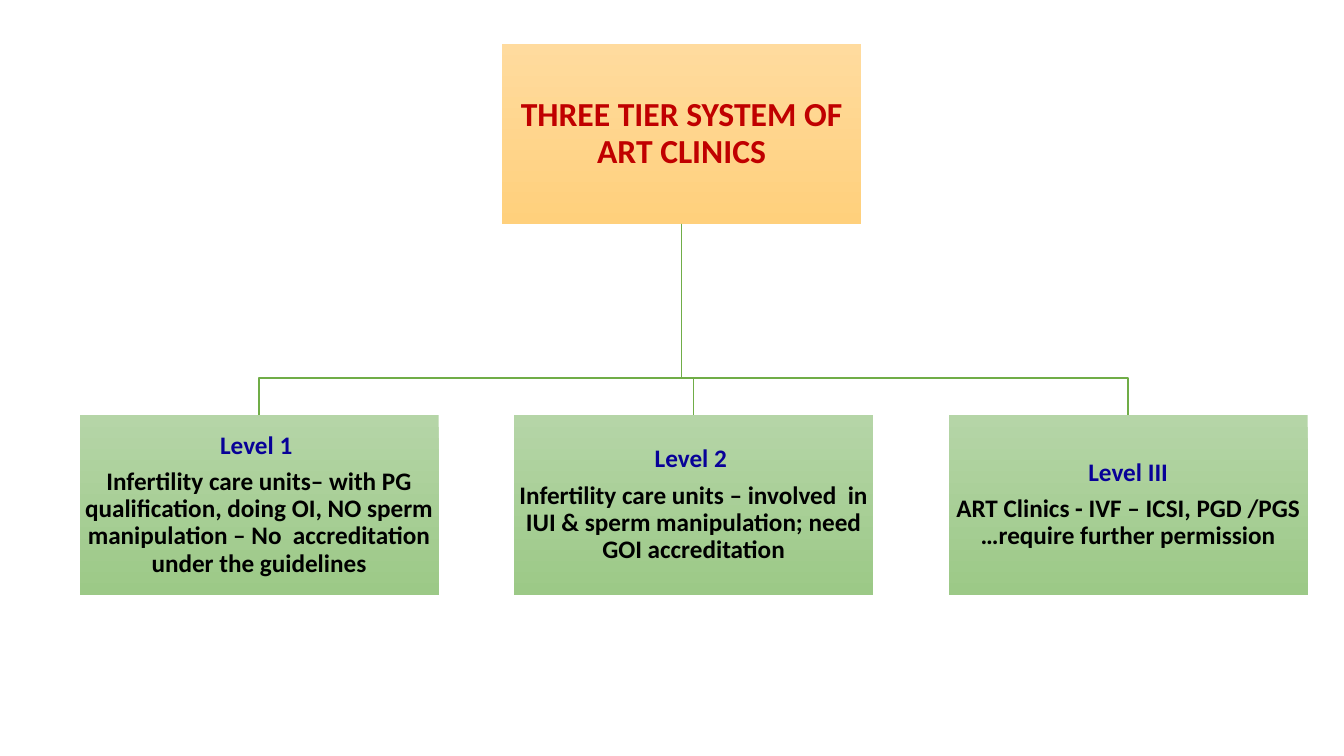
"""Builds an organisation chart of the three tiers of ART clinics."""
from dataclasses import dataclass

from pptx import Presentation
from pptx.dml.color import RGBColor
from pptx.enum.shapes import MSO_SHAPE
from pptx.enum.text import MSO_ANCHOR, MSO_AUTO_SIZE, PP_ALIGN
from pptx.util import Inches, Pt


@dataclass(frozen=True)
class Theme:
    """Colours, font and type sizes of the chart."""
    font: str = "Calibri"
    heading_size: int = 24
    level_size: int = 18
    heading: str = "C00000"
    level: str = "080198"
    detail: str = "000000"
    line: str = "70AD47"
    root_fill: tuple = ("FFDB9E", "FFD07C")
    level_fill: tuple = ("B5D5A7", "9CC987")


class TierChart:
    """Draws boxes and elbow lines on one page in one theme."""

    def __init__(self, page, theme):
        """Keep the page and the theme."""
        self.page = page
        self.theme = theme

    def style_box(self, box, left, top, colours):
        """Place a box and give it a vertical gradient."""
        place = {"left": left, "top": top, "width": BOX_WIDTH, "height": BOX_HEIGHT}
        for name, value in place.items():
            setattr(box, name, Inches(value))
        box.shadow.inherit = False
        box.line.fill.background()
        box.fill.gradient()
        box.fill.gradient_angle = 270
        for stop, colour in zip(box.fill.gradient_stops, colours):
            stop.color.rgb = RGBColor.from_string(colour)

    def add_lines(self, box, lines, size, inset):
        """Fill a box with centred bold paragraphs of text and colour."""
        frame = box.text_frame
        margins = dict.fromkeys(
            ("margin_left", "margin_top", "margin_right", "margin_bottom"), Inches(inset))
        formats = {"word_wrap": True, "auto_size": MSO_AUTO_SIZE.NONE,
                   "vertical_anchor": MSO_ANCHOR.MIDDLE, **margins}
        for name, value in formats.items():
            setattr(frame, name, value)
        for index, (text, colour) in enumerate(lines):
            para = frame.add_paragraph() if index else frame.paragraphs[0]
            spacing = {"alignment": PP_ALIGN.CENTER, "line_spacing": 0.9,
                       "space_before": Pt(0), "space_after": Pt(size * 0.35)}
            for name, value in spacing.items():
                setattr(para, name, value)
            span = para.add_run()
            span.text = text
            for name, value in {"name": self.theme.font, "size": Pt(size), "bold": True}.items():
                setattr(span.font, name, value)
            span.font.color.rgb = RGBColor.from_string(colour)

    def root(self, text, left, top):
        """Turn the title into the top box."""
        box = self.page.shapes.title
        self.style_box(box, left, top, self.theme.root_fill)
        self.add_lines(box, [(text, self.theme.heading)], self.theme.heading_size, 0.02)

    def level(self, name, detail, left, top):
        """Add one level box."""
        box = self.page.shapes.add_shape(MSO_SHAPE.RECTANGLE, 0, 0, 0, 0)
        self.style_box(box, left, top, self.theme.level_fill)
        lines = [(name, self.theme.level), (detail, self.theme.detail)]
        self.add_lines(box, lines, self.theme.level_size, 0.01)

    def elbow(self, start, bend, end):
        """Draw a line down, across and down again."""
        points = [start, (start[0], bend), (end[0], bend), end]
        corners = [(Inches(x), Inches(y)) for x, y in points]
        builder = self.page.shapes.build_freeform(*corners[0])
        builder.add_line_segments(corners[1:], close=False)
        branch = builder.convert_to_shape()
        branch.shadow.inherit = False
        branch.fill.background()
        branch.line.color.rgb = RGBColor.from_string(self.theme.line)
        branch.line.width = Pt(1)


BOX_WIDTH, BOX_HEIGHT = 3.56, 1.78
ROOT_LEFT, ROOT_TOP = 4.98, 0.44
LEVEL_LEFT, LEVEL_TOP, LEVEL_STEP = 0.79, 4.12, 4.31
BEND = 3.75
LEVELS = [
    ("Level 1 ", "Infertility care units– with PG qualification, doing OI, NO sperm "
     "manipulation – No  accreditation under the guidelines"),
    ("Level 2 ", "Infertility care units – involved  in IUI & sperm manipulation; "
     "need GOI accreditation"),
    ("Level III", "ART Clinics - IVF – ICSI, PGD /PGS …require further permission"),
]


def main():
    """Build and save the deck."""
    deck = Presentation()
    deck.slide_width, deck.slide_height = Inches(13.33), Inches(7.5)
    chart = TierChart(deck.slides.add_slide(deck.slide_layouts[5]), Theme())
    chart.root("THREE TIER SYSTEM OF ART CLINICS", ROOT_LEFT, ROOT_TOP)
    start = (ROOT_LEFT + BOX_WIDTH / 2, ROOT_TOP + BOX_HEIGHT)
    for index, (name, detail) in enumerate(LEVELS):
        left = LEVEL_LEFT + index * LEVEL_STEP
        chart.elbow(start, BEND, (left + BOX_WIDTH / 2, LEVEL_TOP))
        chart.level(name, detail, left, LEVEL_TOP)
    deck.save("out.pptx")


if __name__ == "__main__":
    main()
